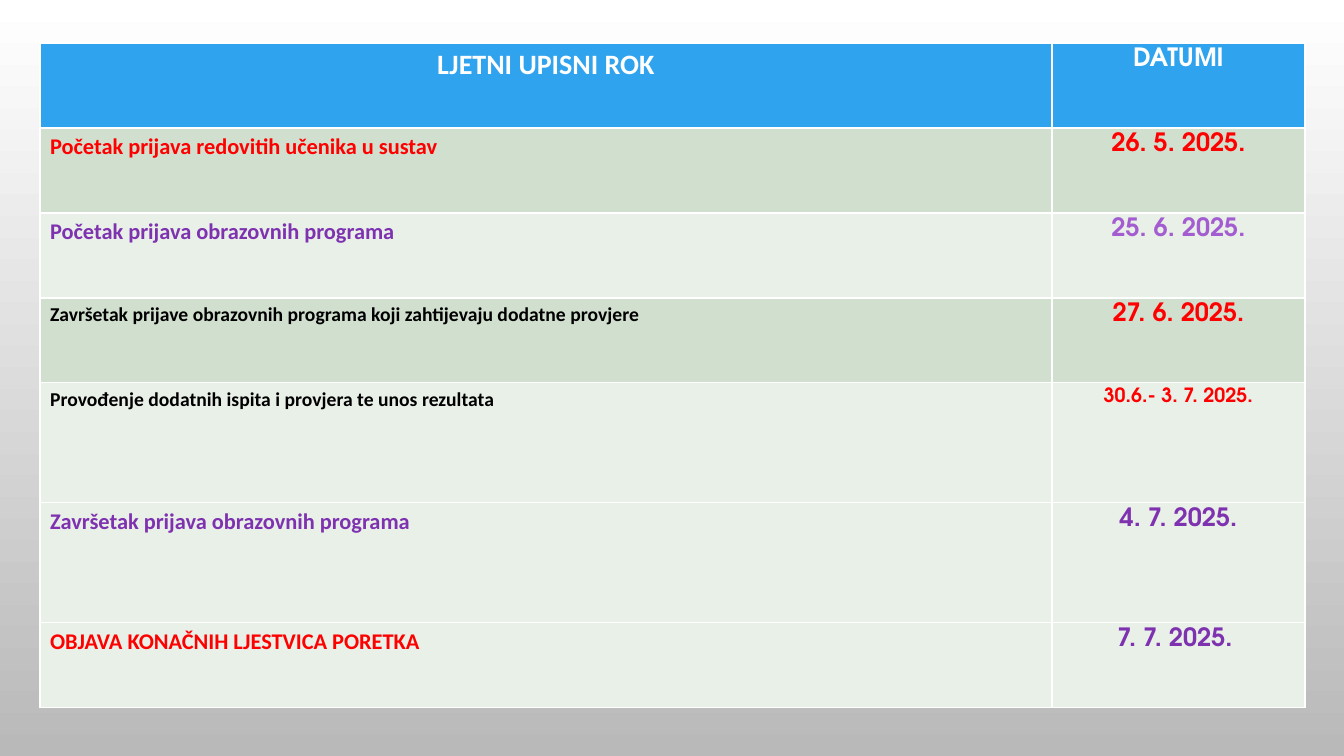
"""Build the slide with the summer enrolment dates."""
import pptx
import pptx.dml.color
import pptx.enum.text
import pptx.util

COLORS = {
    "white": "FFFFFF", "grey": "B9B9B9", "blue": "2FA3EE",
    "sage": "D1DFCE", "mist": "E9F0E8", "black": "000000",
    "red": "FF0000", "purple": "7E32B0", "lilac": "A35DD1",
}
LABEL_FONT, DATE_FONT = "Calibri", "TeX Gyre Adventor"

ROWS = [
    (85, "blue", ("LJETNI UPISNI ROK", 20, "white"), ("DATUMI", 18, "white")),
    (85, "sage", ("Početak prijava redovitih učenika u sustav", 16, "red"),
     ("26. 5. 2025.", 18, "red")),
    (85, "mist", ("Početak prijava obrazovnih programa", 16, "purple"),
     ("25. 6. 2025.", 18, "lilac")),
    (85, "sage", ("Završetak prijave obrazovnih programa koji zahtijevaju dodatne provjere", 14, "black"),
     ("27. 6. 2025.", 18, "red")),
    (120, "mist", ("Provođenje dodatnih ispita i provjera te unos rezultata", 14, "black"),
     ("30.6.- 3. 7. 2025.", 14, "red")),
    (120, "mist", ("Završetak prijava obrazovnih programa", 16, "purple"),
     ("4. 7. 2025.", 18, "purple")),
    (85, "mist", ("OBJAVA KONAČNIH LJESTVICA PORETKA", 16, "red"),
     ("7. 7. 2025. ", 18, "purple")),
]
COL_WIDTHS = [1012, 253]
LEFT, TOP = 40, 43
SLIDE_W, SLIDE_H = 1344, 756


def px(n):
    """Turn px into EMU."""
    return pptx.util.Emu(round(n * 914400 / 100.8))


def rgb(name):
    """Look up a named colour."""
    return pptx.dml.color.RGBColor.from_string(COLORS[name])


def fill_cell(cell, fill, content, font, centred):
    """Set the fill and the text of one cell."""
    text, size, color = content
    cell.fill.solid()
    cell.fill.fore_color.rgb = rgb(fill)
    p = cell.text_frame.paragraphs[0]
    align = pptx.enum.text.PP_ALIGN
    p.alignment = align.CENTER if centred else align.LEFT
    r = p.add_run()
    r.text = text
    r.font.name = font
    r.font.size = pptx.util.Pt(size)
    r.font.bold = True
    r.font.color.rgb = rgb(color)


def main():
    """Draw the background and the table, then save."""
    prs = pptx.Presentation()
    prs.slide_width, prs.slide_height = px(SLIDE_W), px(SLIDE_H)
    s = prs.slides.add_slide(prs.slide_layouts[6])

    bg = s.background.fill
    bg.gradient()
    bg.gradient_angle = 270
    for stop, name, position in zip(bg.gradient_stops, ("white", "grey"), (0, 1)):
        stop.color.rgb = rgb(name)
        stop.position = position

    table = s.shapes.add_table(
        len(ROWS), len(COL_WIDTHS), px(LEFT), px(TOP),
        px(sum(COL_WIDTHS)), px(sum(row[0] for row in ROWS))).table
    for col, width in zip(table.columns, COL_WIDTHS):
        col.width = px(width)
    for i, (height, fill, label, date) in enumerate(ROWS):
        table.rows[i].height = px(height)
        fill_cell(table.cell(i, 0), fill, label, LABEL_FONT, i == 0)
        fill_cell(table.cell(i, 1), fill, date, DATE_FONT, True)

    prs.save("out.pptx")


if __name__ == "__main__":
    main()
